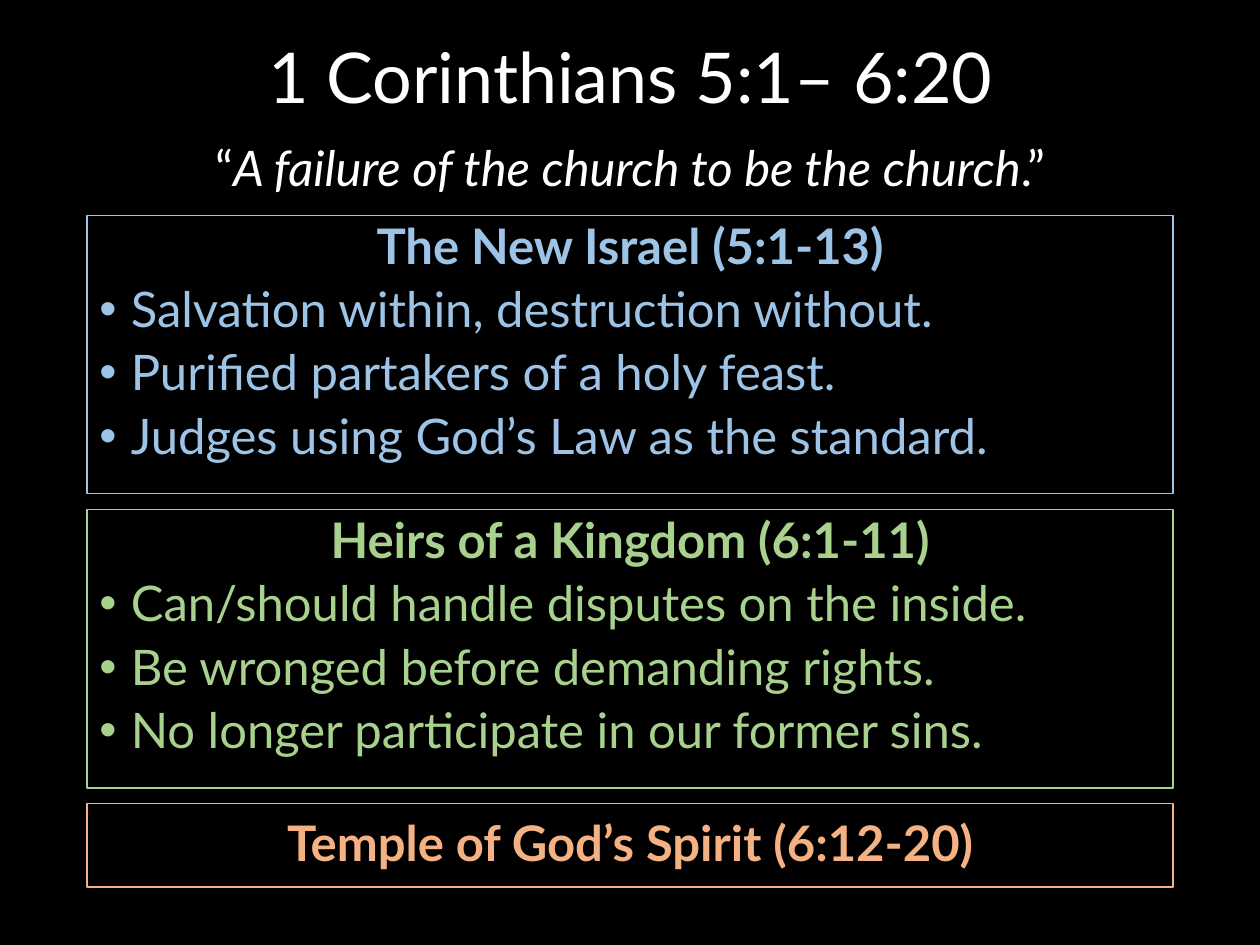
from pptx import Presentation
from pptx.dml.color import RGBColor
from pptx.enum.shapes import MSO_SHAPE as Shape
from pptx.enum.text import MSO_ANCHOR as Anchor, PP_ALIGN as Align
from pptx.util import Inches, Pt
from lxml.etree import SubElement as Sub
from pptx.oxml.ns import qn

COLS, ROWS = 100, 75  # grid over the whole slide
LEFT, SPAN = 6.9, 86.2  # shared column of all parts
WHITE, BLUE, GREEN, ORANGE = "FFFFFF", "9DC3E6", "A9D18E", "F4B183"


def color(code):
    return RGBColor.from_string(code)


class Deck:
    face = "Lato"
    size = 28

    def __init__(self, wide, high):
        self.prs = Presentation()
        self.prs.slide_width, self.prs.slide_height = Inches(wide), Inches(high)
        self.slide = self.prs.slides.add_slide(self.prs.slide_layouts[6])
        fill = self.slide.background.fill
        fill.solid()
        fill.fore_color.rgb = color("000000")

    def place(self, top, rows):
        wide, high = self.prs.slide_width / COLS, self.prs.slide_height / ROWS
        return [round(n) for n in (LEFT * wide, top * high, SPAN * wide, rows * high)]

    def style(self, para, tint, size=None, bold=False, align=Align.CENTER):
        para.alignment = align
        font = para.font
        font.name, font.size, font.bold = self.face, Pt(size or self.size), bold
        font.color.rgb = color(tint)

    def text(self, top, rows, runs, size=None, space=1.0, anchor=Anchor.TOP):
        """Centred white line made of (words, italic) runs."""
        frame = self.slide.shapes.add_textbox(*self.place(top, rows)).text_frame
        frame.word_wrap, frame.vertical_anchor = True, anchor
        para = frame.paragraphs[0]
        self.style(para, WHITE, size)
        para.line_spacing = space
        for words, slant in runs:
            run = para.add_run()
            run.text, run.font.italic = words, slant

    def panel(self, top, rows, tint, head, points=(), anchor=Anchor.TOP):
        """Outlined box with a bold heading and bullet points."""
        box = self.slide.shapes.add_shape(Shape.RECTANGLE, *self.place(top, rows))
        box.shadow.inherit = False
        box.fill.background()
        box.line.color.rgb, box.line.width = color(tint), Pt(0.75)
        frame = box.text_frame
        frame.word_wrap, frame.vertical_anchor = True, anchor
        for i, words in enumerate([head, *points]):
            para = frame.add_paragraph() if i else frame.paragraphs[0]
            para.text = words
            para.line_spacing, para.space_after = 0.9, Pt(6)
            if i:
                self.bullet(para)
            self.style(para, tint, bold=not i, align=Align.LEFT if i else Align.CENTER)

    def bullet(self, para):
        props = para._p.get_or_add_pPr()
        step = Inches(0.25)
        props.set("marL", str(step))
        props.set("indent", str(-step))
        Sub(props, qn("a:buFont")).set("typeface", "Arial")
        Sub(props, qn("a:buChar")).set("char", "•")


def main():
    deck = Deck(10, 7.5)

    # Title and theme
    deck.text(2.5, 7.9, [("1 Corinthians 5:1– 6:20", False)],
              size=40, space=0.9, anchor=Anchor.MIDDLE)
    deck.text(10.4, 6.8, [("“", False),
                          ("A failure of the church to be the church", True),
                          (".”", False)])

    # Sections, stacked with an equal gap
    parts = [
        (22.1, BLUE, "The New Israel (5:1-13)",
         ["Salvation within, destruction without.",
          "Purified partakers of a holy feast.",
          "Judges using God’s Law as the standard."], Anchor.TOP),
        (22.1, GREEN, "Heirs of a Kingdom (6:1-11)",
         ["Can/should handle disputes on the inside.",
          "Be wronged before demanding rights.",
          "No longer participate in our former sins."], Anchor.TOP),
        (6.6, ORANGE, "Temple of God’s Spirit (6:12-20)", [], Anchor.MIDDLE),
    ]
    top, gap = 17.1, 1.25
    for rows, tint, head, points, anchor in parts:
        deck.panel(top, rows, tint, head, points, anchor)
        top += rows + gap

    deck.prs.save("out.pptx")


if __name__ == "__main__":
    main()
